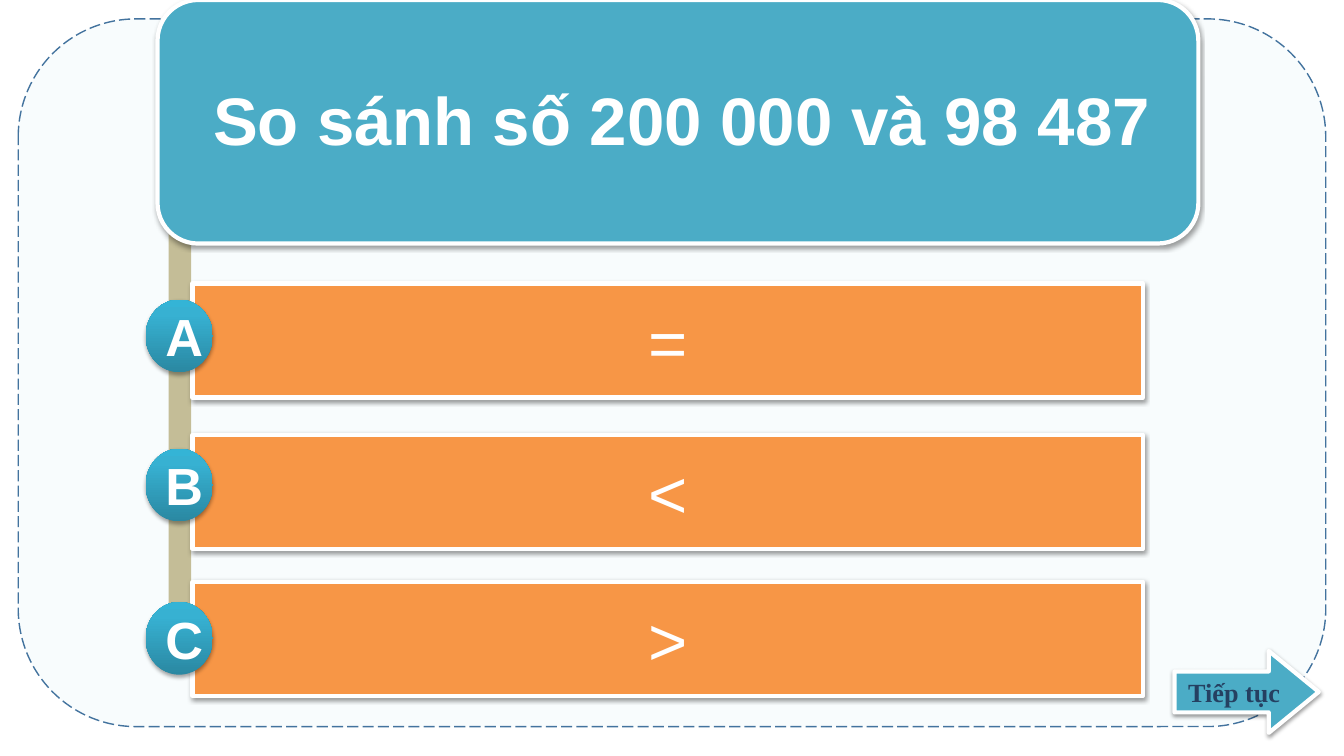
from copy import deepcopy
from dataclasses import dataclass

from lxml.etree import SubElement
from pptx import Presentation
from pptx.dml.color import RGBColor
from pptx.enum.dml import MSO_LINE
from pptx.enum.shapes import MSO_SHAPE as Preset
from pptx.enum.text import MSO_ANCHOR, MSO_AUTO_SIZE, PP_ALIGN
from pptx.oxml.ns import qn
from pptx.util import Pt


@dataclass(frozen=True)
class Theme:
    panel: str = "F8FCFD"
    panel_line: str = "43739E"
    rail: str = "C4BD97"
    teal: str = "4BACC6"
    orange: str = "F79646"
    white: str = "FFFFFF"
    navy: str = "254061"
    badge_stops: tuple = ((0, "2A88A2"), (0.8, "37B1D2"), (1, "34B4D6"))
    font: str = "Arial"
    button_font: str = "Times New Roman"
    main_size: float = 48
    badge_size: float = 37.3
    button_size: float = 18.7


@dataclass(frozen=True)
class Box:
    left: float
    top: float
    width: float
    height: float

    def inner(self, left, top, width, height):
        return Box(self.left + left, self.top + top, width, height)

    def lengths(self):
        return [Pt(value) for value in (self.left, self.top, self.width, self.height)]


THEME = Theme()


def add_preset(slide, preset, box, fill=None, line=None, line_width=3):
    shape = slide.shapes.add_shape(preset, *box.lengths())
    shape.shadow.inherit = False
    if fill:
        shape.fill.solid()
        shape.fill.fore_color.rgb = RGBColor.from_string(fill)
    if line:
        shape.line.color.rgb = RGBColor.from_string(line)
        shape.line.width = Pt(line_width)
    else:
        shape.line.fill.background()
    return shape


def add_shadow(shape, opacity=38, distance=1.6):
    effects = shape.element.spPr.find(qn("a:effectLst"))
    shadow = SubElement(effects, qn("a:outerShdw"), blurRad=str(Pt(3.1)),
                        dist=str(Pt(distance)), dir="5400000", rotWithShape="0")
    colour = SubElement(shadow, qn("a:srgbClr"), val="000000")
    SubElement(colour, qn("a:alpha"), val=str(opacity * 1000))


def write(shape, text, size, colour=THEME.white, font=THEME.font, bold=False,
          align=PP_ALIGN.CENTER):
    frame = shape.text_frame
    frame.text = text
    frame.word_wrap = True
    frame.vertical_anchor = MSO_ANCHOR.MIDDLE
    paragraph = frame.paragraphs[0]
    paragraph.alignment = align
    paragraph.font.name = font
    paragraph.font.size = Pt(size)
    paragraph.font.bold = bold
    paragraph.font.color.rgb = RGBColor.from_string(colour)


def fill_badge(shape):
    fill = shape.fill
    fill.gradient()
    fill.gradient_angle = 90
    stop_list = shape.element.spPr.find(".//" + qn("a:gsLst"))
    stop_list.append(deepcopy(stop_list[0]))
    for stop, (position, colour) in zip(fill.gradient_stops, THEME.badge_stops):
        stop.position = position
        stop.color.rgb = RGBColor.from_string(colour)


# Dashed panel and the rail that holds the answers
def add_background(slide, box):
    panel = add_preset(slide, Preset.ROUNDED_RECTANGLE, box,
                       THEME.panel, THEME.panel_line, 1)
    panel.line.dash_style = MSO_LINE.LONG_DASH
    add_preset(slide, Preset.RECTANGLE, box.inner(107.5, 144, 16, 304), THEME.rail)


# Question card with the slide title on top
def add_question(slide, box, question):
    card = add_preset(slide, Preset.ROUNDED_RECTANGLE, box, THEME.teal, THEME.white)
    add_shadow(card)
    title = slide.shapes.title
    title.left, title.top, title.width, title.height = box.inner(
        32.5, 52, 780.5, 65.5).lengths()
    write(title, question, THEME.main_size, bold=True, align=PP_ALIGN.JUSTIFY)
    title.text_frame.auto_size = MSO_AUTO_SIZE.SHAPE_TO_FIT_TEXT
    title.element.getparent().append(title.element)


# One answer: bar with a lettered badge over its left end
def add_answer(slide, box, letter, answer, badge_drop):
    bar = add_preset(slide, Preset.RECTANGLE, box, THEME.orange, THEME.white)
    add_shadow(bar)
    write(bar, answer, THEME.main_size)
    badge = add_preset(slide, Preset.OVAL, box.inner(-33.5, badge_drop, 48, 52))
    fill_badge(badge)
    add_shadow(badge, opacity=35, distance=1.8)
    write(badge, letter, THEME.badge_size, bold=True)


# Continue button
def add_continue(slide, box, label):
    arrow = add_preset(slide, Preset.RIGHT_ARROW, box, THEME.teal, THEME.white)
    arrow.adjustments[1] = 0.61
    add_shadow(arrow)
    write(arrow, label, THEME.button_size, THEME.navy, THEME.button_font, bold=True)


def main():
    presentation = Presentation()
    presentation.slide_width, presentation.slide_height = Pt(960), Pt(540)
    slide = presentation.slides.add_slide(presentation.slide_layouts[5])

    add_background(slide, Box(13, 13.5, 934, 505.5))
    add_question(slide, Box(112.5, 0, 743.5, 174), "So sánh số 200 000 và 98 487")
    answers = (("A", "=", 202.5, 11.5), ("B", "<", 310.5, 10), ("C", ">", 415.5, 14.5))
    for letter, answer, top, badge_drop in answers:
        add_answer(slide, Box(137.5, top, 679, 81.5), letter, answer, badge_drop)
    add_continue(slide, Box(839, 465, 103, 58.5), "Tiếp tục")

    presentation.save("out.pptx")


if __name__ == "__main__":
    main()
